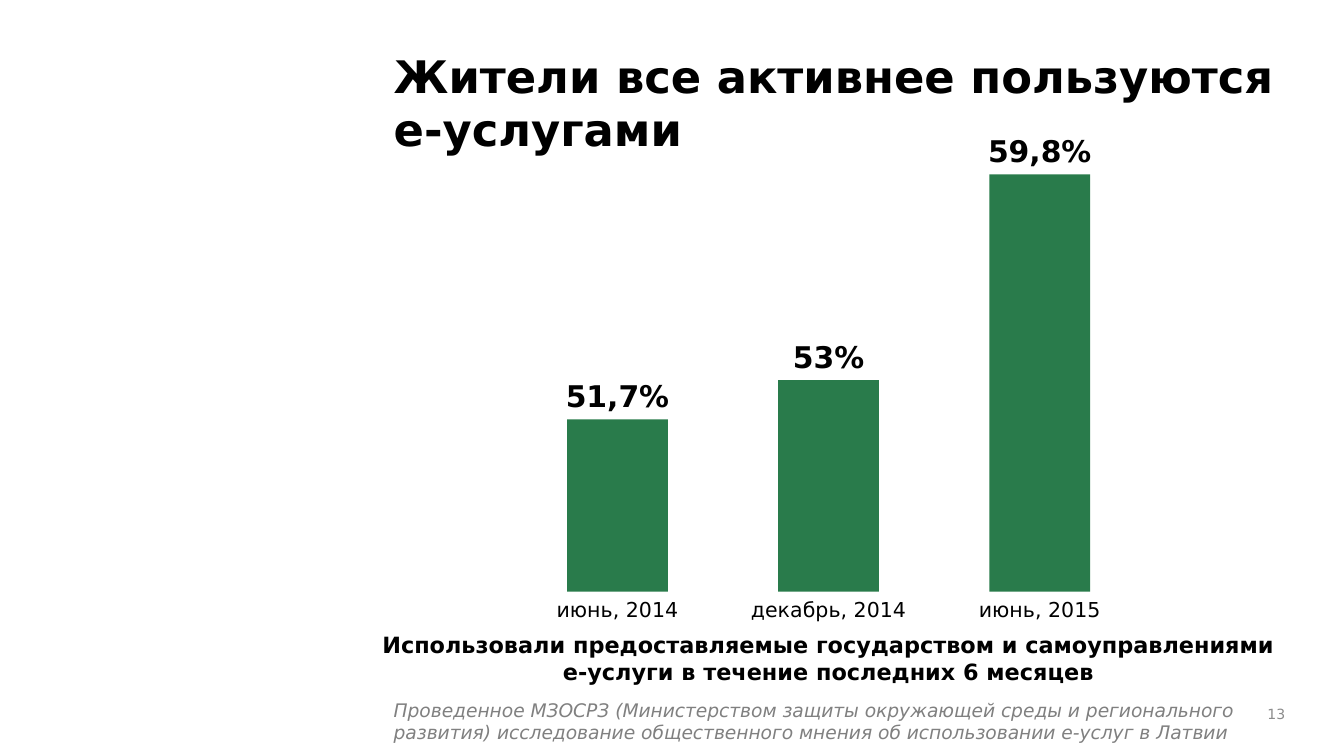
import pptx
import pptx.dml.color
import pptx.enum.shapes
import pptx.enum.text
import pptx.util

Pt = pptx.util.Pt
RGBColor = pptx.dml.color.RGBColor
ALIGN = pptx.enum.text.PP_ALIGN
ANCHOR = pptx.enum.text.MSO_ANCHOR

BLACK = RGBColor(0x00, 0x00, 0x00)
GREEN = RGBColor(0x29, 0x7B, 0x4B)
GRAY = RGBColor(0x80, 0x80, 0x80)
LIGHT_GRAY = RGBColor(0x8C, 0x8C, 0x8C)
FONT = "DejaVu Sans"

BARS = [
    ("июнь, 2014", "51,7%", 51.7),
    ("декабрь, 2014", "53%", 53),
    ("июнь, 2015", "59,8%", 59.8),
]

TITLE = {"size": Pt(24), "bold": True}
VALUE = {"size": Pt(16), "bold": True}
PERIOD = {"size": Pt(11)}
CAPTION = {"size": Pt(12), "bold": True}
SOURCE = {"size": Pt(10), "italic": True}
NUMBER = {"size": Pt(7.5)}

TEXTS = [
    ("Жители все активнее пользуются е-услугами",
     (203.8, 22.3, 492, 61.2), TITLE, BLACK, ALIGN.LEFT, ANCHOR.TOP),
    ("Использовали предоставляемые государством и самоуправлениями\v"
     "е-услуги в течение последних 6\u00a0месяцев".replace("\u00a0", chr(160)),
     (185.8, 334.8, 516.2, 36), CAPTION, BLACK, ALIGN.CENTER, ANCHOR.TOP),
    ("Проведенное МЗОСРЗ (Министерством защиты окружающей среды и регионального "
     "развития) исследование общественного мнения об использовании е-услуг в Латвии",
     (203.8, 370.8, 498.2, 31.7), SOURCE, GRAY, ALIGN.LEFT, ANCHOR.TOP),
    ("13", (671.8, 373.7, 23.8, 18), NUMBER, LIGHT_GRAY, ALIGN.RIGHT, ANCHOR.MIDDLE),
]

FIRST_CENTER = 330.8
BAR_PITCH = 113.1
BAR_WIDTH = 54
BASELINE = 317
AXIS_START = 46
POINTS_PER_PERCENT = 16.2
LABEL_HEIGHT = 22.3
VALUE_WIDTH = 60.5
PERIOD_WIDTH = 98


def add_text(slide, text, box, font_format, color, alignment, anchor=ANCHOR.TOP,
             margins=(7.2, 3.6)):
    shape = slide.shapes.add_textbox(*map(Pt, box))
    frame = shape.text_frame
    horizontal, vertical = map(Pt, margins)
    frame_format = {
        "word_wrap": True,
        "vertical_anchor": anchor,
        "margin_left": horizontal,
        "margin_right": horizontal,
        "margin_top": vertical,
        "margin_bottom": vertical,
    }
    for name, value in frame_format.items():
        setattr(frame, name, value)
    frame.text = text
    paragraph = frame.paragraphs[0]
    paragraph.alignment = alignment
    for run in paragraph.runs:
        for name, value in {"name": FONT, **font_format}.items():
            setattr(run.font, name, value)
        run.font.color.rgb = color


def add_bar(slide, index, period, label, percent):
    center = FIRST_CENTER + index * BAR_PITCH
    height = (percent - AXIS_START) * POINTS_PER_PERCENT
    top = BASELINE - height
    bar = slide.shapes.add_shape(
        pptx.enum.shapes.MSO_SHAPE.RECTANGLE,
        Pt(center - BAR_WIDTH / 2), Pt(top), Pt(BAR_WIDTH), Pt(height))
    bar.shadow.inherit = False
    bar.fill.solid()
    bar.fill.fore_color.rgb = GREEN
    bar.line.fill.background()
    labels = [
        (period, PERIOD_WIDTH, BASELINE - 0.8, PERIOD, (0, 3.6)),
        (label, VALUE_WIDTH, top - LABEL_HEIGHT, VALUE, (0, 0)),
    ]
    for text, width, text_top, font_format, margins in labels:
        box = (center - width / 2, text_top, width, LABEL_HEIGHT)
        add_text(slide, text, box, font_format, BLACK, ALIGN.CENTER, margins=margins)


def main():
    presentation = pptx.Presentation()
    presentation.slide_width = Pt(720)
    presentation.slide_height = Pt(405)
    slide = presentation.slides.add_slide(presentation.slide_layouts[6])
    for index, bar in enumerate(BARS):
        add_bar(slide, index, *bar)
    for text in TEXTS:
        add_text(slide, *text)
    presentation.save("out.pptx")


if __name__ == "__main__":
    main()
